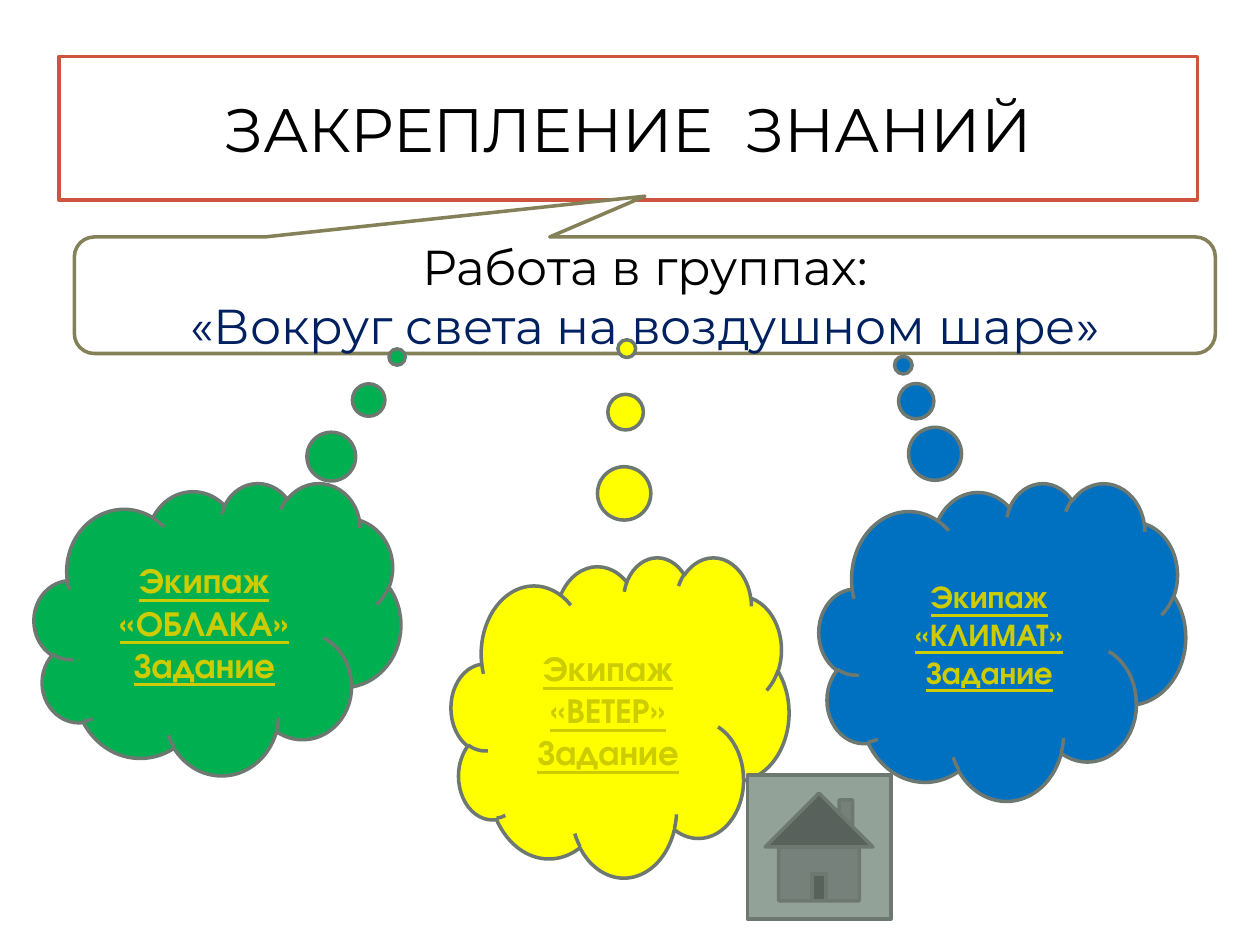
from pptx import Presentation
from pptx.dml.color import RGBColor
from pptx.enum import shapes, text
from pptx.util import Pt

COLORS = {
    "white": "FFFFFF", "black": "000000", "red": "CF543F", "olive": "848058",
    "navy": "002060", "gray": "6D7871", "sage": "93A299", "link": "CCCC00",
    "green": "00B050", "yellow": "FFFF00", "blue": "0070C0",
}
HEADING_FONT = "Montserrat"
CREW_FONT = "TeX Gyre Adventor"


def color(name):
    """Return the named colour."""
    return RGBColor.from_string(COLORS[name])


def paint(shape, fill, line):
    """Give a shape a solid fill and a two-point outline."""
    shape.fill.solid()
    shape.fill.fore_color.rgb = color(fill)
    shape.line.color.rgb = color(line)
    shape.line.width = Pt(2)


def write(shape, lines, font, size, tints, emphasis=False):
    """Write centred lines, one tint for each."""
    frame = shape.text_frame
    frame.text = "\n".join(lines)
    frame.word_wrap = True
    frame.auto_size = text.MSO_AUTO_SIZE.NONE
    frame.vertical_anchor = text.MSO_ANCHOR.MIDDLE
    for para, tint in zip(frame.paragraphs, tints):
        para.alignment = text.PP_ALIGN.CENTER
        for span in para.runs:
            span.font.name = font
            span.font.size = Pt(size)
            span.font.color.rgb = color(tint)
            span.font.bold = emphasis
            span.font.underline = emphasis


def add_figure(page, kind, box, fill, line, adjustments=()):
    """Add a painted preset shape in the given box."""
    shape = page.shapes.add_shape(kind, *map(Pt, box))
    shape.shadow.inherit = False
    paint(shape, fill, line)
    for index, value in enumerate(adjustments):
        shape.adjustments[index] = value
    return shape


def place_title(page, box):
    """Place the framed title."""
    title = page.shapes.title
    title.left, title.top, title.width, title.height = map(Pt, box)
    paint(title, "white", "red")
    write(title, ["ЗАКРЕПЛЕНИЕ  ЗНАНИЙ"], HEADING_FONT, 35, ["black"])


def place_topic(page, box):
    """Place the speech callout that names the group work."""
    callout = add_figure(page, shapes.MSO_SHAPE.ROUNDED_RECTANGULAR_CALLOUT, box,
                         "white", "olive", (0, -0.85, 0.17))
    write(callout, ["Работа в группах:", "«Вокруг света на воздушном шаре»"],
          HEADING_FONT, 28, ["black", "navy"])


def place_crew(page, box, crew, fill, size, tail):
    """Place one crew's thought cloud."""
    cloud = add_figure(page, shapes.MSO_SHAPE.CLOUD_CALLOUT, box, fill, "gray", tail)
    write(cloud, ["Экипаж", f"«{crew}»", "Задание"], CREW_FONT, size,
          ["link"] * 3, emphasis=True)


def place_home(page, box):
    """Place the home button."""
    add_figure(page, shapes.MSO_SHAPE.ACTION_BUTTON_HOME, box, "sage", "gray")


def main():
    """Build the slide and save it."""
    deck = Presentation()
    deck.slide_width, deck.slide_height = Pt(720), Pt(540)
    page = deck.slides.add_slide(deck.slide_layouts[5])
    place_title(page, (33.7, 32.2, 650.5, 82))
    place_topic(page, (42.5, 135.4, 652, 66.6))
    crews = [
        ((19.5, 275.8, 209.5, 167), "ОБЛАКА", "green", 20, (0.49, -0.93)),
        ((257.8, 318.2, 193, 183), "ВЕТЕР", "yellow", 20, (0.02, -1.15)),
        ((468, 275.8, 209.5, 181.5), "КЛИМАТ", "blue", 18, (-0.27, -0.87)),
    ]
    for crew in crews:
        place_crew(page, *crew)
    place_home(page, (427, 443, 82, 82))
    deck.save("out.pptx")


if __name__ == "__main__":
    main()
